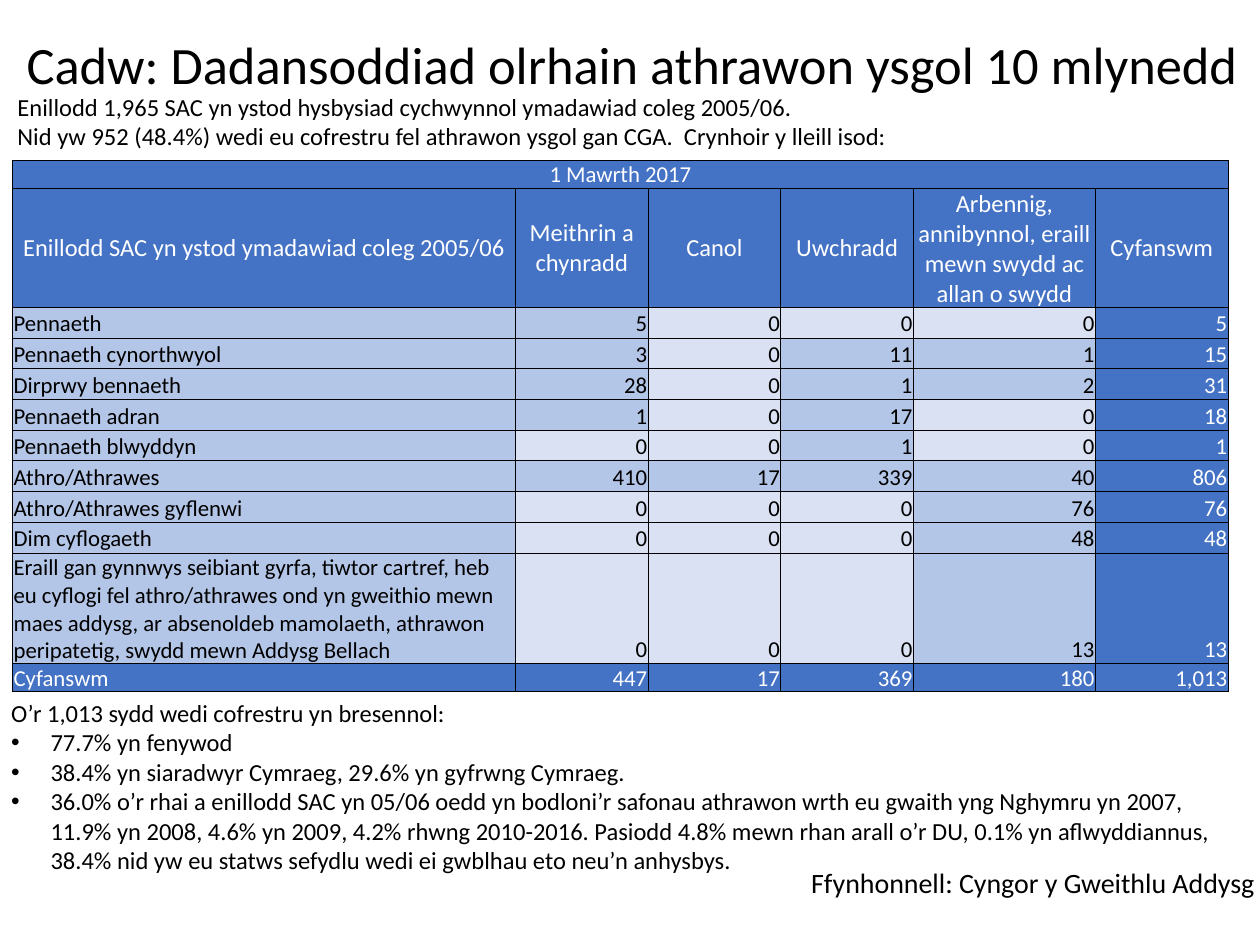
from dataclasses import dataclass

import lxml.etree
import pptx
import pptx.dml.color
import pptx.enum.text
import pptx.oxml.ns
import pptx.util

Pt = pptx.util.Pt
Align = pptx.enum.text.PP_ALIGN
Anchor = pptx.enum.text.MSO_ANCHOR
AutoSize = pptx.enum.text.MSO_AUTO_SIZE
qn = pptx.oxml.ns.qn

BLACK = pptx.dml.color.RGBColor(0x00, 0x00, 0x00)
WHITE = pptx.dml.color.RGBColor(0xFF, 0xFF, 0xFF)
STRONG_BLUE = pptx.dml.color.RGBColor(0x44, 0x72, 0xC4)
MID_BLUE = pptx.dml.color.RGBColor(0xB4, 0xC6, 0xE7)
PALE_BLUE = pptx.dml.color.RGBColor(0xD9, 0xE1, 0xF2)
FONT = "Calibri"


@dataclass
class Line:
    text: str
    bullet: bool = False


@dataclass
class Note:
    left: float
    top: float
    width: float
    height: float
    size: float
    lines: list[Line]


TITLE = "Cadw: Dadansoddiad olrhain athrawon ysgol 10 mlynedd"

NOTES = [
    Note(-0.7, 395.3, 709.2, 131, 14, [
        Line("O’r 1,013 sydd wedi cofrestru yn bresennol:"),
        Line("77.7% yn fenywod", True),
        Line("38.4% yn siaradwyr Cymraeg, 29.6% yn gyfrwng Cymraeg.", True),
        Line("36.0% o’r rhai a enillodd SAC yn 05/06 oedd yn bodloni’r safonau athrawon "
             "wrth eu gwaith yng Nghymru yn 2007, 11.9% yn 2008, 4.6% yn 2009, 4.2% rhwng "
             "2010-2016. Pasiodd 4.8% mewn rhan arall o’r DU, 0.1% yn aflwyddiannus, 38.4% "
             "nid yw eu statws sefydlu wedi ei gwblhau eto neu’n anhysbys.", True),
    ]),
    Note(2.9, 49, 702.7, 41, 14, [
        Line("Enillodd 1,965 SAC yn ystod hysbysiad cychwynnol ymadawiad coleg 2005/06."),
        Line("Nid yw 952 (48.4%) wedi eu cofrestru fel athrawon ysgol gan CGA.  "
             "Crynhoir y lleill isod:"),
    ]),
    Note(456.5, 491, 280, 26.6, 16, [Line("Ffynhonnell: Cyngor y Gweithlu Addysg")]),
]

TABLE_ROWS = [
    ["1 Mawrth 2017", "", "", "", "", ""],
    ["Enillodd SAC yn ystod ymadawiad coleg 2005/06", "Meithrin a chynradd", "Canol",
     "Uwchradd", "Arbennig, annibynnol, eraill mewn swydd ac allan o swydd", "Cyfanswm"],
    ["Pennaeth", "5", "0", "0", "0", "5"],
    ["Pennaeth cynorthwyol", "3", "0", "11", "1", "15"],
    ["Dirprwy bennaeth", "28", "0", "1", "2", "31"],
    ["Pennaeth adran", "1", "0", "17", "0", "18"],
    ["Pennaeth blwyddyn", "0", "0", "1", "0", "1"],
    ["Athro/Athrawes", "410", "17", "339", "40", "806"],
    ["Athro/Athrawes gyflenwi", "0", "0", "0", "76", "76"],
    ["Dim cyflogaeth", "0", "0", "0", "48", "48"],
    ["Eraill gan gynnwys seibiant gyrfa, tiwtor cartref, heb eu cyflogi fel athro/athrawes "
     "ond yn gweithio mewn maes addysg, ar absenoldeb mamolaeth, athrawon peripatetig, "
     "swydd mewn Addysg Bellach", "0", "0", "0", "13", "13"],
    ["Cyfanswm", "447", "17", "369", "180", "1,013"],
]
COLUMN_WIDTHS = [287.4, 75.8, 75.8, 75.8, 104, 75.8]
ROW_HEIGHTS = [16, 68] + [17.55] * 8 + [62.8, 16]
HEADER_ROWS = 2


def format_font(para, size: float, color) -> None:
    para.font.name = FONT
    para.font.size = Pt(size)
    para.font.color.rgb = color


def add_bullet(para) -> None:
    properties = para._p.get_or_add_pPr()
    properties.set("marL", str(Pt(22.5)))
    properties.set("indent", str(-Pt(22.5)))
    lxml.etree.SubElement(properties, qn("a:buFont"), typeface="Arial")
    lxml.etree.SubElement(properties, qn("a:buChar"), char="•")


def add_title(page) -> None:
    title = page.shapes.title
    title.left, title.top, title.width, title.height = Pt(1.4), Pt(10.8), Pt(720), Pt(51)
    frame = title.text_frame
    frame.text = TITLE
    frame.auto_size = AutoSize.NONE
    frame.vertical_anchor = Anchor.MIDDLE
    format_font(frame.paragraphs[0], 30, BLACK)


def add_note(page, note: Note) -> None:
    box = page.shapes.add_textbox(Pt(note.left), Pt(note.top), Pt(note.width), Pt(note.height))
    frame = box.text_frame
    frame.word_wrap = True
    frame.auto_size = AutoSize.SHAPE_TO_FIT_TEXT
    for index, line in enumerate(note.lines):
        para = frame.add_paragraph() if index else frame.paragraphs[0]
        para.text = line.text
        if line.bullet:
            add_bullet(para)
        format_font(para, note.size, BLACK)


def add_borders(cell) -> None:
    properties = cell._tc.get_or_add_tcPr()
    for side in ("a:lnL", "a:lnR", "a:lnT", "a:lnB"):
        border = lxml.etree.SubElement(properties, qn(side), w=str(Pt(0.5)))
        fill = lxml.etree.SubElement(border, qn("a:solidFill"))
        lxml.etree.SubElement(fill, qn("a:srgbClr"), val=str(BLACK))


def format_cell(cell, text: str, row: int, column: int) -> None:
    header = row < HEADER_ROWS
    strong = header or row == len(TABLE_ROWS) - 1 or column == len(COLUMN_WIDTHS) - 1
    add_borders(cell)
    cell.fill.solid()
    cell.fill.fore_color.rgb = STRONG_BLUE if strong else PALE_BLUE if text == "0" else MID_BLUE
    cell.margin_left = cell.margin_right = cell.margin_top = Pt(0.6)
    cell.margin_bottom = Pt(0)
    cell.vertical_anchor = Anchor.MIDDLE if header else Anchor.BOTTOM
    cell.text = text
    para = cell.text_frame.paragraphs[0]
    para.alignment = Align.CENTER if header else Align.RIGHT if column else Align.LEFT
    format_font(para, 14 if row == 1 else 13, WHITE if strong else BLACK)


def add_teacher_table(page) -> None:
    frame = page.shapes.add_table(len(TABLE_ROWS), len(COLUMN_WIDTHS), Pt(7.2), Pt(91.4),
                                  Pt(sum(COLUMN_WIDTHS)), Pt(sum(ROW_HEIGHTS)))
    table = frame.table
    for column, width in zip(table.columns, COLUMN_WIDTHS):
        column.width = Pt(width)
    for row, height in zip(table.rows, ROW_HEIGHTS):
        row.height = Pt(height)
    for row, texts in enumerate(TABLE_ROWS):
        for column, text in enumerate(texts):
            format_cell(table.cell(row, column), text, row, column)
    table.cell(0, 0).merge(table.cell(0, len(COLUMN_WIDTHS) - 1))


def main() -> None:
    deck = pptx.Presentation()
    deck.slide_width, deck.slide_height = Pt(720), Pt(540)
    page = deck.slides.add_slide(deck.slide_layouts.get_by_name("Title Only"))
    add_title(page)
    for note in NOTES:
        add_note(page, note)
    add_teacher_table(page)
    deck.save("out.pptx")


if __name__ == "__main__":
    main()
